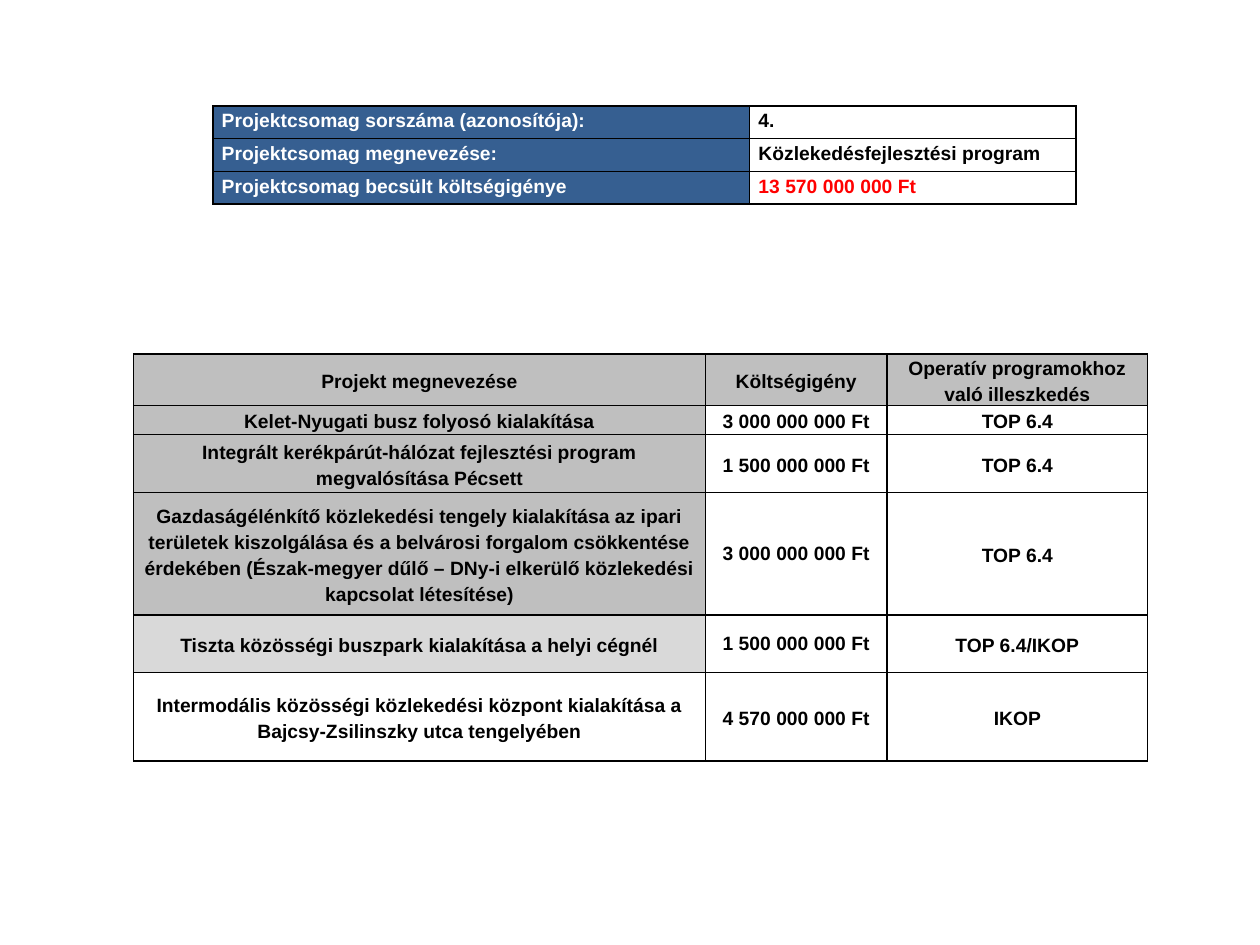
import pptx
import pptx.util
import pptx.dml.color
import pptx.enum.text
import pptx.oxml.ns
import lxml.etree
from pptx.util import Inches, Pt

COLORS = {
    "blue": "365F91", "gray": "BFBFBF", "light": "D9D9D9",
    "white": "FFFFFF", "black": "000000", "red": "FF0000",
}
ALIGN = pptx.enum.text.PP_ALIGN
ANCHOR = pptx.enum.text.MSO_ANCHOR

# Package summary: label, value, value colour
SUMMARY = [
    ("Projektcsomag sorszáma (azonosítója):", "4.", "black"),
    ("Projektcsomag megnevezése:", "Közlekedésfejlesztési program", "black"),
    ("Projektcsomag becsült költségigénye", "13 570 000 000 Ft", "red"),
]

# Projects: row height, name fill, value fill, texts
PROJECTS = [
    (0.41, "gray", "gray",
     ("Projekt megnevezése", "Költségigény", "Operatív programokhoz való illeszkedés")),
    (0.23, "gray", "white",
     ("Kelet-Nyugati busz folyosó kialakítása", "3 000 000 000 Ft", "TOP 6.4")),
    (0.46, "gray", "white",
     ("Integrált kerékpárút-hálózat fejlesztési program megvalósítása Pécsett",
      "1 500 000 000 Ft", "TOP 6.4")),
    (0.97, "gray", "white",
     ("Gazdaságélénkítő közlekedési tengely kialakítása az ipari területek "
      "kiszolgálása és a belvárosi forgalom csökkentése érdekében (Észak-megyer "
      "dűlő – DNy-i elkerülő közlekedési kapcsolat létesítése)",
      "3 000 000 000 Ft", "TOP 6.4")),
    (0.46, "light", "white",
     ("Tiszta közösségi buszpark kialakítása a helyi cégnél",
      "1 500 000 000 Ft", "TOP 6.4/IKOP")),
    (0.7, "white", "white",
     ("Intermodális közösségi közlekedési központ kialakítása a "
      "Bajcsy-Zsilinszky utca tengelyében", "4 570 000 000 Ft", "IKOP")),
]
SINGLE_SPACED = {(3, 1), (4, 1)}  # cost cells without extra spacing


def rgb(name):
    return pptx.dml.color.RGBColor.from_string(COLORS[name])


def add_grid(slide, left, top, widths, heights):
    frame = slide.shapes.add_table(
        len(heights), len(widths), Inches(left), Inches(top),
        Inches(sum(widths)), Inches(sum(heights)))
    table = frame.table
    table.first_row = table.horz_banding = False
    for column, width in zip(table.columns, widths):
        column.width = Inches(width)
    for row, height in zip(table.rows, heights):
        row.height = Inches(height)
    return table


def add_borders(cell):
    properties = cell._tc.get_or_add_tcPr()
    qn = pptx.oxml.ns.qn
    for index, side in enumerate(("lnL", "lnR", "lnT", "lnB")):
        line = lxml.etree.Element(qn("a:" + side), w=str(Pt(1)))
        fill = lxml.etree.SubElement(line, qn("a:solidFill"))
        lxml.etree.SubElement(fill, qn("a:srgbClr"), val=COLORS["black"])
        properties.insert(index, line)


def fill_cell(cell, text, fill, color, align, anchor, margin, line_spacing=1.2, gap=0):
    cell.margin_left = cell.margin_right = Inches(margin)
    cell.margin_top = cell.margin_bottom = 0
    cell.vertical_anchor = anchor
    if fill:
        cell.fill.solid()
        cell.fill.fore_color.rgb = rgb(fill)
    else:
        cell.fill.background()
    add_borders(cell)
    paragraph = cell.text_frame.paragraphs[0]
    paragraph.alignment = align
    paragraph.line_spacing = line_spacing
    paragraph.space_before = paragraph.space_after = Pt(gap)
    run = paragraph.add_run()
    run.text = text
    run.font.name = "Arial"
    run.font.size = Pt(11)
    run.font.bold = True
    run.font.color.rgb = rgb(color)


def main():
    presentation = pptx.Presentation()
    presentation.slide_width = Inches(10)
    presentation.slide_height = Inches(7.5)
    slide = presentation.slides.add_slide(presentation.slide_layouts[6])

    # Summary table
    summary = add_grid(slide, 1.69, 0.84, [4.26, 2.59], [0.26] * len(SUMMARY))
    for row, (label, value, color) in enumerate(SUMMARY):
        style = (ALIGN.JUSTIFY, ANCHOR.TOP, 0.07)
        fill_cell(summary.cell(row, 0), label, "blue", "white", *style)
        fill_cell(summary.cell(row, 1), value, None, color, *style)

    # Project table
    heights = [project[0] for project in PROJECTS]
    projects = add_grid(slide, 1.06, 2.81, [4.54, 1.44, 2.07], heights)
    for row, (_, name_fill, value_fill, texts) in enumerate(PROJECTS):
        for column, text in enumerate(texts):
            spacing = (1, 0) if (row, column) in SINGLE_SPACED else (1.2, 6)
            fill_cell(projects.cell(row, column), text,
                      value_fill if column else name_fill, "black",
                      ALIGN.CENTER, ANCHOR.MIDDLE, 0.05, *spacing)

    presentation.save("out.pptx")


if __name__ == "__main__":
    main()
